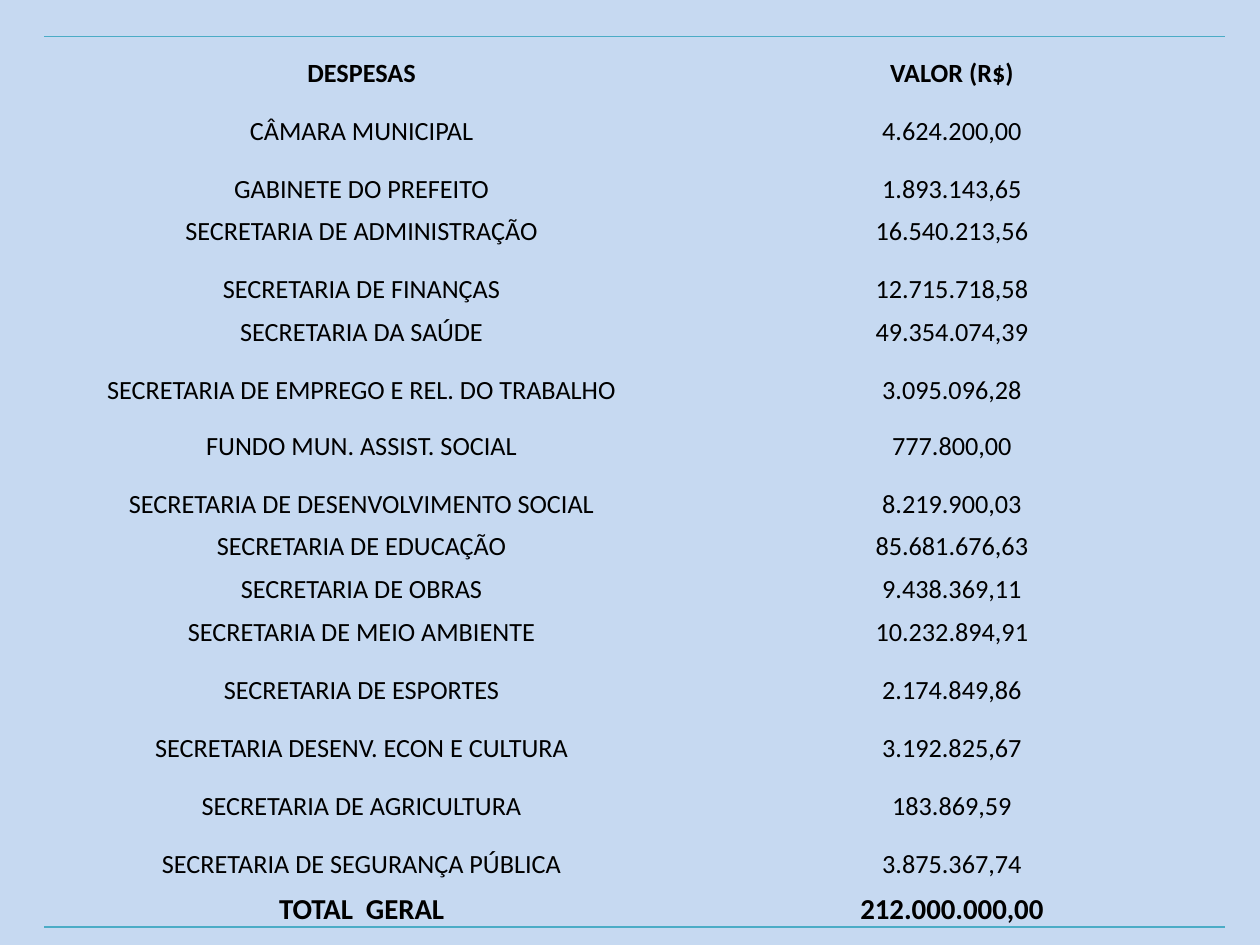
import pptx
import pptx.util
import pptx.dml.color
import pptx.enum.text
import pptx.oxml
import pptx.oxml.ns


def paint(fill, tone):
    fill.solid()
    fill.fore_color.rgb = pptx.dml.color.RGBColor.from_string(tone)


def rule(cell, side, tone):
    line = pptx.oxml.parse_xml(
        f'<a:{side} {pptx.oxml.ns.nsdecls("a")} w="12700"><a:solidFill>'
        f'<a:srgbClr val="{tone}"/></a:solidFill></a:{side}>')
    cell._tc.get_or_add_tcPr().insert(0, line)


back, teal, black = "C6D9F1", "4BACC6", "000000"
plain = "{2D5ABB26-0587-4C30-8999-92F81FD0307C}"
tall, short = 0.46, 0.34
rows = [
    (0.42, "DESPESAS", "VALOR (R$)"),
    (tall, "CÂMARA MUNICIPAL", "4.624.200,00"),
    (tall, "GABINETE DO PREFEITO", "1.893.143,65"),
    (short, "SECRETARIA DE ADMINISTRAÇÃO", "16.540.213,56"),
    (tall, "SECRETARIA DE FINANÇAS", "12.715.718,58"),
    (short, "SECRETARIA DA SAÚDE", "49.354.074,39"),
    (tall, "SECRETARIA DE EMPREGO E REL. DO TRABALHO", "3.095.096,28"),
    (0.44, "FUNDO MUN. ASSIST. SOCIAL", "777.800,00"),
    (tall, "SECRETARIA DE DESENVOLVIMENTO SOCIAL", "8.219.900,03"),
    (short, "SECRETARIA DE EDUCAÇÃO", "85.681.676,63"),
    (short, "SECRETARIA DE OBRAS", "9.438.369,11"),
    (short, "SECRETARIA DE MEIO AMBIENTE", "10.232.894,91"),
    (tall, "SECRETARIA DE ESPORTES", "2.174.849,86"),
    (tall, "SECRETARIA DESENV. ECON E CULTURA", "3.192.825,67"),
    (tall, "SECRETARIA DE AGRICULTURA", "183.869,59"),
    (tall, "SECRETARIA DE SEGURANÇA PÚBLICA", "3.875.367,74"),
    (0.37, "TOTAL  GERAL", "212.000.000,00"),
]
cols = [5.04, 4.33]
last = len(rows) - 1
inch = pptx.util.Inches

deck = pptx.Presentation()
deck.slide_width, deck.slide_height = inch(10), inch(7.5)
slide = deck.slides.add_slide(deck.slide_layouts[6])
paint(slide.background.fill, back)

frame = slide.shapes.add_table(
    len(rows), len(cols), inch(0.35), inch(0.29),
    inch(sum(cols)), inch(sum(row[0] for row in rows)))
table = frame.table
table.first_row = table.horz_banding = False
for style in frame._element.iter(pptx.oxml.ns.qn("a:tableStyleId")):
    style.text = plain
for col, width in zip(table.columns, cols):
    col.width = inch(width)

for r, (height, *texts) in enumerate(rows):
    table.rows[r].height = inch(height)
    for c, text in enumerate(texts):
        cell = table.cell(r, c)
        cell.margin_left = cell.margin_right = cell.margin_top = inch(0.01)
        cell.margin_bottom = 0
        cell.vertical_anchor = pptx.enum.text.MSO_ANCHOR.BOTTOM
        paint(cell.fill, back)
        cell.text = text
        para = cell.text_frame.paragraphs[0]
        para.alignment = pptx.enum.text.PP_ALIGN.CENTER
        para.font.name = "Calibri"
        para.font.size = pptx.util.Pt(16.5 if r == last else 15)
        para.font.bold = r in (0, last)
        paint(para.font.fill, black)
        if r == 0:
            rule(cell, "lnT", teal)
        if r == last:
            rule(cell, "lnB", teal)

deck.save("out.pptx")
